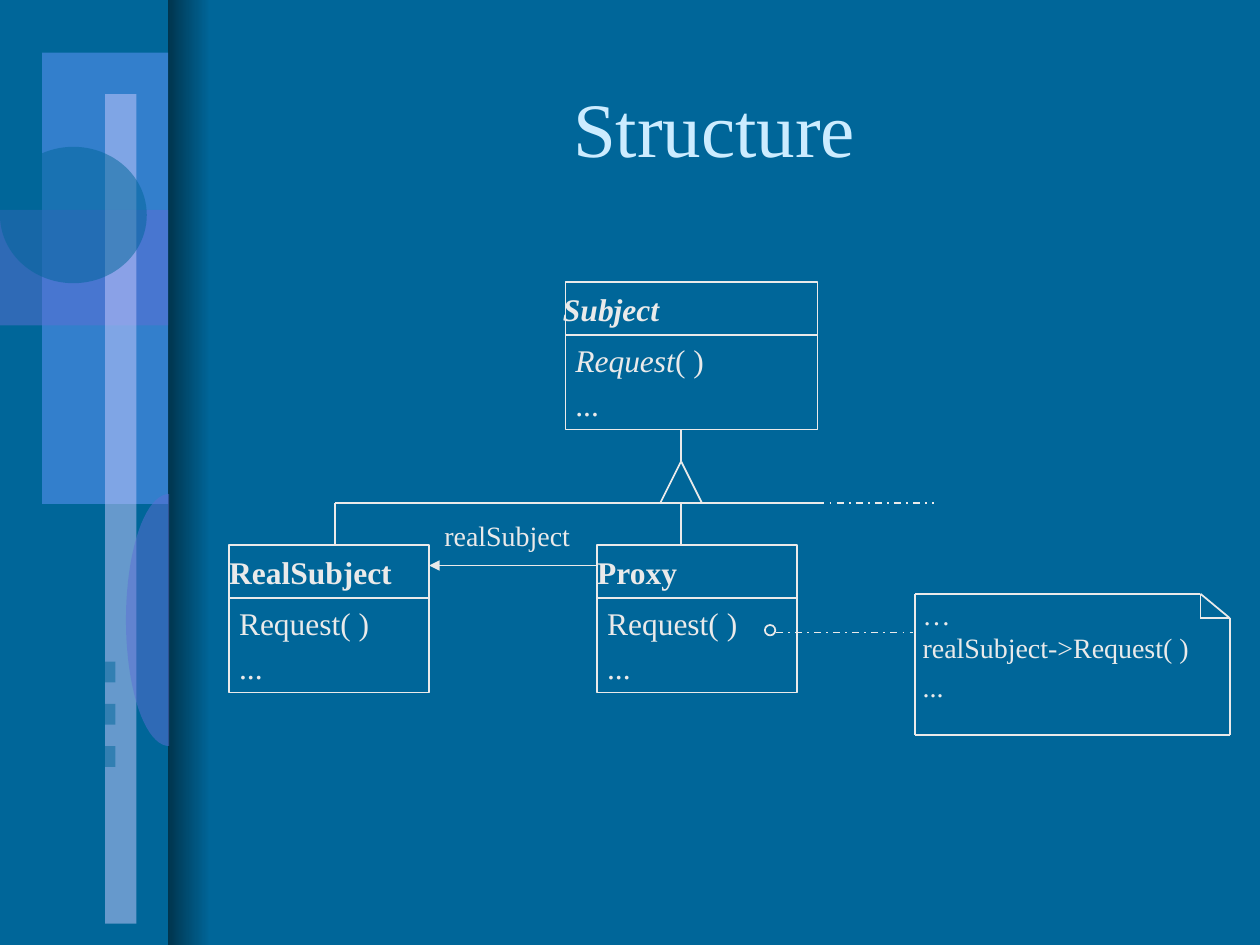
"""Build the class diagram slide for the Proxy pattern."""
from math import cos, pi, sin

from pptx import Presentation
from pptx.dml.color import RGBColor
from pptx.enum.dml import MSO_LINE_DASH_STYLE as Dash
from pptx.enum.shapes import MSO_CONNECTOR as Link, MSO_SHAPE as Kind
from pptx.enum.text import PP_ALIGN as Align
from pptx.oxml.ns import qn
from pptx.util import Cm, Pt
from lxml.etree import SubElement as Sub

tint = RGBColor.from_string
BLUE, PALE = "006699", "EAEAEA"
deck = Presentation()
deck.slide_width, deck.slide_height = Cm(25.4), Cm(19.05)
slide = deck.slides.add_slide(deck.slide_layouts[6])
slide.background.fill.solid()
slide.background.fill.fore_color.rgb = tint(BLUE)
shapes = slide.shapes


def line(x1, y1, x2, y2, dash=None, head=False):
    link = shapes.add_connector(Link.STRAIGHT, Cm(x1), Cm(y1), Cm(x2), Cm(y2))
    link.line.color.rgb = tint(PALE)
    link.line.width = Pt(1)
    if dash:
        link.line.dash_style = dash
    prop = link._element.spPr
    if head:
        Sub(prop.find(qn("a:ln")), qn("a:tailEnd"), type="triangle")
    Sub(prop, qn("a:effectLst"))


def text(x, y, w, h, paras, size, color=PALE, align=Align.LEFT, gaps=()):
    frame = shapes.add_textbox(Cm(x), Cm(y), Cm(w), Cm(h)).text_frame
    frame.word_wrap = True
    frame.margin_left = frame.margin_right = 0
    frame.margin_top = frame.margin_bottom = 0
    for i, runs in enumerate(paras):
        para = frame.paragraphs[0] if i == 0 else frame.add_paragraph()
        para.alignment = align
        if i in gaps:
            para.space_before = Pt(size * 0.2)
        for words, style in runs:
            run = para.add_run()
            run.text = words
            font = run.font
            font.name, font.size = "Times New Roman", Pt(size)
            font.color.rgb = tint(color)
            font.bold, font.italic = "b" in style, "i" in style


band = shapes.add_shape(Kind.RECTANGLE, Cm(3.39), 0, Cm(0.85), Cm(19.05))
band.shadow.inherit = False
band.line.fill.background()
band.fill.gradient()
band.fill.gradient_angle = 0
for stop, color, place in zip(band.fill.gradient_stops, ("00354E", BLUE), (0, 1)):
    stop.color.rgb = tint(color)
    stop.position = place

decor = []
for kind, x, y, w, h, color in [
    (Kind.RECTANGLE, 0.85, 1.06, 2.54, 9.1, "6699FF"),
    (Kind.RECTANGLE, 0, 4.23, 3.39, 2.33, "5E6FD4"),
    (Kind.RECTANGLE, 2.12, 1.9, 0.63, 16.72, "CCCCFF"),
    (Kind.OVAL, 0, 2.96, 2.96, 2.75, BLUE),
    *[(Kind.RECTANGLE, 0, 13.34 + 0.85 * i, 2.33, 0.42, BLUE) for i in range(3)],
]:
    decor.append((shapes.add_shape(kind, Cm(x), Cm(y), Cm(w), Cm(h)), color))
arc = [(Cm(3.41 - 0.87 * sin(pi * i / 40)), Cm(12.5 - 2.54 * cos(pi * i / 40)))
       for i in range(41)]
pen = shapes.build_freeform(*arc[0])
pen.add_line_segments(arc[1:], close=True)
decor.append((pen.convert_to_shape(), "5E6FD4"))
for shape, color in decor:
    shape.shadow.inherit = False
    shape.line.fill.background()
    shape.fill.solid()
    shape.fill.fore_color.rgb = tint(color)
    Sub(shape._element.spPr.find(".//" + qn("a:srgbClr")), qn("a:alpha"), val="50000")

text(3.6, 1.63, 21.6, 3, [[("Structure", "")]], 44, "CCECFF", Align.CENTER)

for name, style, x, y, w, shift, call in [
    ("Subject", "bi", 11.4, 5.69, 5.08, -0.05, [("Request", "i"), ("( )", "")]),
    ("RealSubject", "b", 4.62, 10.99, 4.03, 0, [("Request( )", "")]),
    ("Proxy", "b", 12.04, 10.99, 4.03, 0, [("Request( )", "")]),
]:
    box = shapes.add_shape(Kind.RECTANGLE, Cm(x), Cm(y), Cm(w), Cm(2.97))
    box.shadow.inherit = False
    box.fill.background()
    box.line.color.rgb = tint(PALE)
    box.line.width = Pt(1)
    line(x, y + 1.06, x + w, y + 1.06)
    text(x + shift, y + 0.15, 3.8, 1.02, [[(name, style)]], 18)
    text(x + 0.2, y + 1.19, 3.15, 1.78, [call, [("...", "")]], 18, gaps=(1,))

for ends in [
    (13.73, 10.14, 13.73, 10.99),
    (16.48, 10.14, 6.75, 10.14),
    (6.75, 10.14, 6.75, 10.99),
    (13.73, 8.66, 13.73, 9.3),
    (13.73, 9.3, 13.31, 10.14),
    (13.73, 9.3, 14.15, 10.14),
    (24.2, 11.97, 18.45, 11.97),
    (18.45, 11.97, 18.45, 14.81),
    (18.45, 14.81, 24.79, 14.81),
    (24.79, 14.81, 24.79, 12.46),
    (24.2, 11.97, 24.79, 12.46),
    (24.2, 11.97, 24.2, 12.46),
    (24.79, 12.46, 24.2, 12.46),
]:
    line(*ends)
line(16.48, 10.14, 18.82, 10.14, Dash.DASH_DOT)
line(15.64, 12.75, 18.4, 12.75, Dash.DASH_DOT)
line(12.04, 11.4, 8.65, 11.4, head=True)

dot = shapes.add_shape(Kind.OVAL, Cm(15.42), Cm(12.6), Cm(0.21), Cm(0.21))
dot.shadow.inherit = False
dot.fill.solid()
dot.fill.fore_color.rgb = tint(BLUE)
dot.line.color.rgb = tint(PALE)
dot.line.width = Pt(1)

text(8.96, 10.46, 3.05, 0.94, [[("realSubject", "")]], 16)
note = ["…", "realSubject->Request( )", "..."]
text(18.6, 12.04, 6.15, 2.29, [[(words, "")] for words in note], 16, gaps=(2,))

deck.save("out.pptx")
